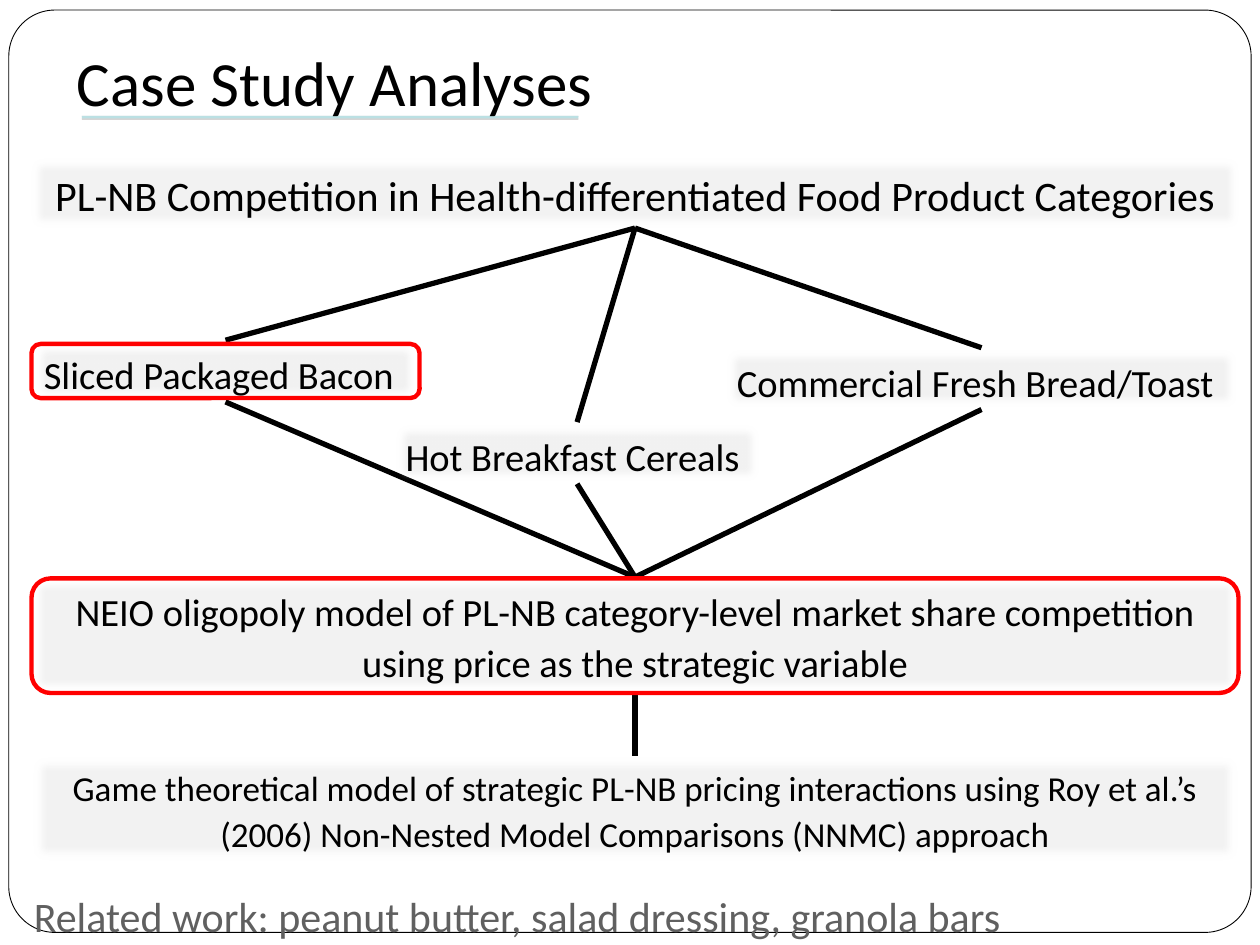
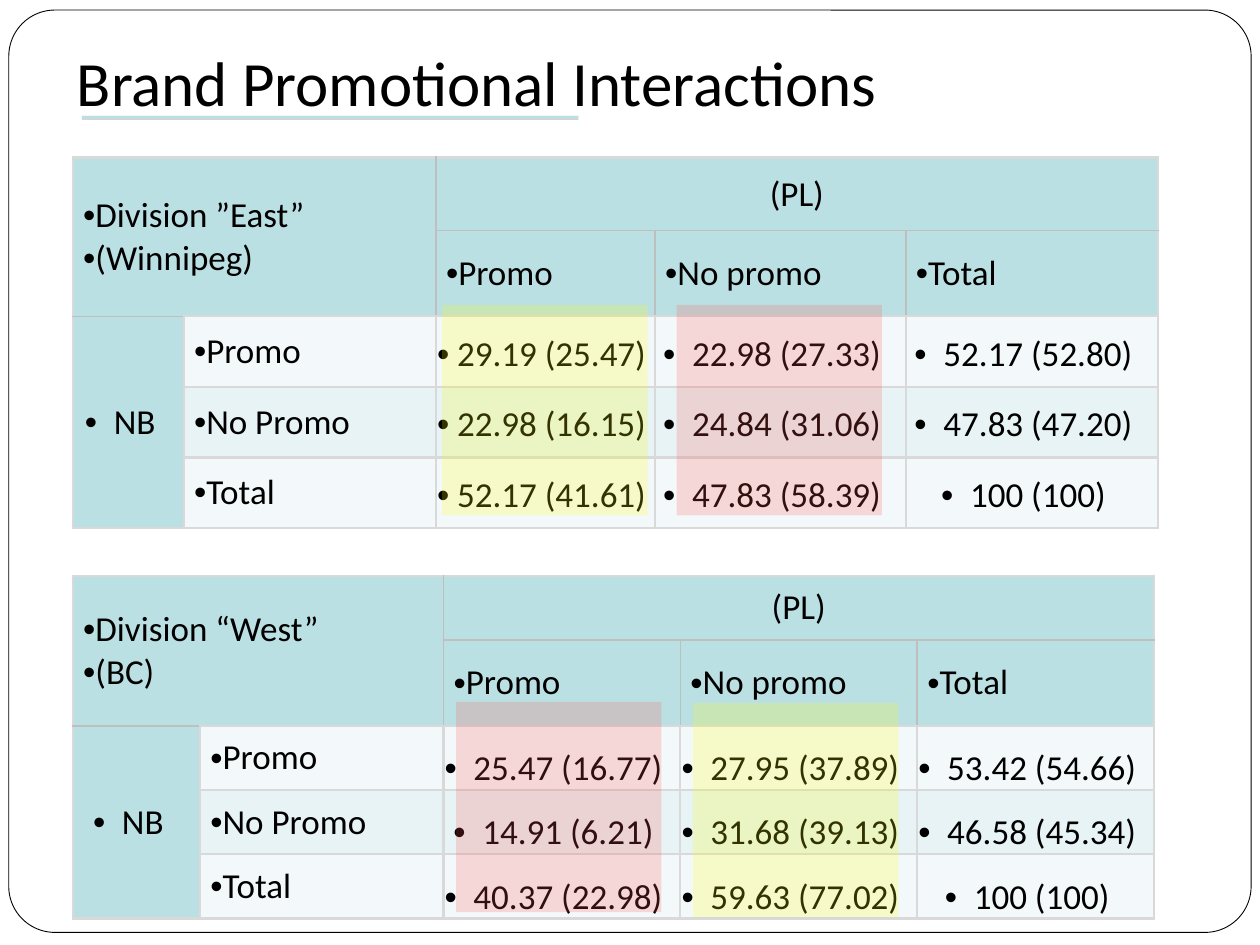
from dataclasses import dataclass

from lxml import etree
from pptx import Presentation
from pptx.dml.color import RGBColor
from pptx.enum.shapes import MSO_CONNECTOR, MSO_SHAPE
from pptx.enum.text import MSO_ANCHOR, MSO_AUTO_SIZE, PP_ALIGN
from pptx.oxml.ns import qn
from pptx.util import Inches, Pt

BLACK = RGBColor(0x00, 0x00, 0x00)
GREY_TEXT = RGBColor(0x60, 0x60, 0x60)
BOX_GREY = RGBColor(0xF2, 0xF2, 0xF2)
RULE_GREY = RGBColor(0xD9, 0xD9, 0xD9)
INNER_GREY = RGBColor(0xBF, 0xBF, 0xBF)
TEAL = RGBColor(0xBB, 0xE0, 0xE3)
PALE = RGBColor(0xF3, 0xF9, 0xFA)
PALE_BAND = RGBColor(0xE7, 0xF3, 0xF4)
RED = RGBColor(0xFF, 0x00, 0x00)
YELLOW = RGBColor(0xFF, 0xFF, 0x00)
CORAL = RGBColor(0xFF, 0x50, 0x50)

FONT = "Calibri"
RECT, ROUNDED = MSO_SHAPE.RECTANGLE, MSO_SHAPE.ROUNDED_RECTANGLE
STRAIGHT = MSO_CONNECTOR.STRAIGHT
LEFT, CENTER = PP_ALIGN.LEFT, PP_ALIGN.CENTER
TOP, MIDDLE, BOTTOM = MSO_ANCHOR.TOP, MSO_ANCHOR.MIDDLE, MSO_ANCHOR.BOTTOM
FIT_SHAPE, NO_FIT = MSO_AUTO_SIZE.SHAPE_TO_FIT_TEXT, MSO_AUTO_SIZE.NONE
SIDE_TOP, SIDE_BOTTOM = 0, 2
TITLE_ONLY = 5
HEADER_ROWS, TABLE_ROWS, TABLE_COLS = 2, 5, 5


@dataclass
class Box:
    text: str
    at: tuple[float, float, float, float]
    size: int
    align: PP_ALIGN = LEFT
    before: float = 0.2
    after: float = 0


@dataclass
class Division:
    names: list[str]
    at: tuple[float, float]
    widths: list[float]
    heights: list[float]
    values: list[list[str]]
    anchor: MSO_ANCHOR


@dataclass
class Highlight:
    at: tuple[float, float, float, float]
    color: RGBColor


HEADING = Box("PL-NB Competition in Health-differentiated Food Product Categories",
              (0.25, 1.26, 9.58, 0.55), 24, CENTER, 0)
CATEGORIES = [
    Box("Sliced Packaged Bacon", (0.25, 2.7, 3.08, 0.49), 22),
    Box("Hot Breakfast Cereals", (3.12, 3.35, 2.92, 0.49), 22, before=0),
    Box("Commercial Fresh Bread/Toast", (5.75, 2.76, 4.08, 0.49), 22),
]
MARKET_MODEL = Box(
    "NEIO oligopoly model of PL-NB category-level market share competition "
    "using price as the strategic variable",
    (0.25, 4.58, 9.58, 0.92), 22, CENTER, after=0.2)
GAME_MODEL = Box(
    "Game theoretical model of strategic PL-NB pricing interactions using "
    "Roy et al.’s (2006) Non-Nested Model Comparisons (NNMC) approach",
    (0.25, 6, 9.58, 0.84), 20, CENTER, after=0.2)
RED_OUTLINES = [(0.25, 4.59, 9.58, 0.91), (0.25, 2.73, 3.08, 0.43)]

DIVISIONS = [
    Division(["Division ”East”", "(Winnipeg)"], (0.58, 1.25),
             [0.88, 2, 1.74, 1.99, 2], [0.58, 0.58, 0.56, 0.56, 0.56],
             [["29.19 (25.47)", "22.98 (27.33)", "52.17 (52.80)"],
              ["22.98 (16.15)", "24.84 (31.06)", "47.83 (47.20)"],
              ["52.17 (41.61)", "47.83 (58.39)", "100 (100)"]], MIDDLE),
    Division(["Division “West”", "(BC)"], (0.58, 4.57),
             [1.01, 1.93, 1.88, 1.88, 1.88], [0.51] * TABLE_ROWS,
             [["25.47 (16.77)", "27.95 (37.89)", "53.42 (54.66)"],
              ["14.91 (6.21)", "31.68 (39.13)", "46.58 (45.34)"],
              ["40.37 (22.98)", "59.63 (77.02)", "100 (100)"]], BOTTOM),
]
HIGHLIGHTS = [
    Highlight((3.51, 2.42, 1.63, 1.67), YELLOW),
    Highlight((5.5, 5.58, 1.63, 1.7), YELLOW),
    Highlight((5.37, 2.42, 1.63, 1.67), CORAL),
    Highlight((3.62, 5.57, 1.63, 1.67), CORAL),
]


def inches(values) -> list:
    return [Inches(v) for v in values]


def write(p, text: str, size: int, color: RGBColor = BLACK, align=LEFT,
          spacing: float = 1.1, before: float = 0, after: float = 0) -> None:
    """Fill a paragraph; before and after are shares of the text size."""
    p.alignment, p.line_spacing = align, spacing
    p.space_before, p.space_after = Pt(before * size), Pt(after * size)
    r = p.add_run()
    r.text = text
    r.font.name, r.font.size, r.font.color.rgb = FONT, Pt(size), color


def add_bullet(p, hanging: float) -> None:
    pPr = p._p.get_or_add_pPr()
    pPr.set("marL", "0")
    pPr.set("indent", str(-Inches(hanging)))
    etree.SubElement(pPr, qn("a:buFont"), typeface="Arial")
    etree.SubElement(pPr, qn("a:buChar"), char="•")


def add_panel(slide, kind, at, fill=None, line=None, width: float = 0):
    sp = slide.shapes.add_shape(kind, *inches(at))
    sp.shadow.inherit = False
    if fill is None:
        sp.fill.background()
    else:
        sp.fill.solid()
        sp.fill.fore_color.rgb = fill
    if line is None:
        sp.line.fill.background()
    else:
        sp.line.color.rgb, sp.line.width = line, Pt(width)
    return sp


def add_titled_slide(prs, title: str):
    """Add a slide with the rounded frame, the accent bar and the title."""
    slide = prs.slides.add_slide(prs.slide_layouts[TITLE_ONLY])
    frame = add_panel(slide, ROUNDED, (0.07, 0.08, 9.86, 7.32), None, BLACK, 0.5)
    frame.adjustments[0] = 0.05
    for top, height, color in ((0.92, 0.01, RULE_GREY), (0.94, 0.01, INNER_GREY),
                               (0.92, 0.02, TEAL)):
        add_panel(slide, RECT, (0.65, top, 3.94, height), color)
    sp = slide.shapes.title
    sp.left, sp.top, sp.width, sp.height = inches((0.51, -0.01, 8.21, 1.25))
    tf = sp.text_frame
    tf.auto_size, tf.vertical_anchor = NO_FIT, MIDDLE
    write(tf.paragraphs[0], title, 36)
    slide.shapes._spTree.append(sp._element)
    return slide


def add_soft_box(slide, box: Box):
    """Add a grey text box whose edges fade out."""
    sp = add_panel(slide, RECT, box.at, BOX_GREY)
    effects = sp._element.spPr.find(qn("a:effectLst"))
    etree.SubElement(effects, qn("a:softEdge"), rad=str(Pt(5)))
    tf = sp.text_frame
    tf.word_wrap, tf.auto_size, tf.vertical_anchor = True, FIT_SHAPE, TOP
    write(tf.paragraphs[0], box.text, box.size, align=box.align,
          before=box.before, after=box.after)
    return sp


def join(slide, upper, lower) -> None:
    line = slide.shapes.add_connector(STRAIGHT, 0, 0, 0, 0)
    line.begin_connect(upper, SIDE_BOTTOM)
    line.end_connect(lower, SIDE_TOP)
    line.line.color.rgb, line.line.width = BLACK, Pt(3)
    etree.SubElement(line._element.spPr, qn("a:effectLst"))


def add_case_study_slide(prs) -> None:
    slide = add_titled_slide(prs, "Case Study Analyses")
    heading = add_soft_box(slide, HEADING)
    market = add_soft_box(slide, MARKET_MODEL)
    for category in CATEGORIES:
        sp = add_soft_box(slide, category)
        join(slide, heading, sp)
        join(slide, sp, market)
    join(slide, market, add_soft_box(slide, GAME_MODEL))
    for at in RED_OUTLINES:
        add_panel(slide, ROUNDED, at, None, RED, 2.5)

    tf = slide.shapes.add_textbox(*inches((0.17, 6.98, 8.03, 0.52))).text_frame
    tf.word_wrap, tf.auto_size = False, FIT_SHAPE
    write(tf.paragraphs[0],
          "Related work: peanut butter, salad dressing, granola bars",
          24, GREY_TEXT, before=0.2, after=0.2)


def style_cell(cell, row: int, col: int) -> None:
    """Set borders and fill; lines between header cells are thin and darker."""
    header = row < HEADER_ROWS
    inner = {
        "lnL": header and col > 0,
        "lnR": header and col < (2 if row == 0 else TABLE_COLS - 1),
        "lnT": row == 1 or (row == 2 and col == 0),
        "lnB": row == 0 or (row == 1 and col < 2),
    }
    tcPr = cell._tc.get_or_add_tcPr()
    for tag, is_inner in inner.items():
        ln = etree.SubElement(tcPr, qn(f"a:{tag}"), w=str(Pt(1 if is_inner else 1.5)))
        fill = etree.SubElement(ln, qn("a:solidFill"))
        etree.SubElement(fill, qn("a:srgbClr"),
                         val=str(INNER_GREY if is_inner else RULE_GREY))
    cell.fill.solid()
    banded = PALE_BAND if row == 3 else PALE
    cell.fill.fore_color.rgb = TEAL if header or col == 0 else banded


def fill_cell(cell, lines: list[str], align=LEFT, bullet: bool = True,
              value_anchor=None) -> None:
    """Write the lines; a value cell has tight margins and looser spacing."""
    is_value = value_anchor is not None
    side, top = (0.01, 0.01) if is_value else (0.08, 0)
    cell.margin_left = cell.margin_right = Inches(side)
    cell.margin_top, cell.margin_bottom = Inches(top), 0
    cell.vertical_anchor = value_anchor if is_value else MIDDLE
    spacing, before, after = (1.1, 0.12, 0.2) if is_value else (1.0, 0, 0)
    tf = cell.text_frame
    for i, text in enumerate(lines):
        p = tf.add_paragraph() if i else tf.paragraphs[0]
        write(p, text, 20, align=align, spacing=spacing, before=before, after=after)
        if bullet:
            add_bullet(p, 0.23 if align == CENTER else 0)


def add_division_table(slide, division: Division) -> None:
    size = sum(division.widths), sum(division.heights)
    table = slide.shapes.add_table(TABLE_ROWS, TABLE_COLS,
                                   *inches(division.at + size)).table
    table.first_row = table.horz_banding = False
    for column, width in zip(table.columns, division.widths):
        column.width = Inches(width)
    for row, height in zip(table.rows, division.heights):
        row.height = Inches(height)
    for r in range(TABLE_ROWS):
        for c in range(TABLE_COLS):
            style_cell(table.cell(r, c), r, c)
    for first, last in (((0, 0), (1, 1)), ((0, 2), (0, 4)), ((2, 0), (4, 0))):
        table.cell(*first).merge(table.cell(*last))

    fill_cell(table.cell(0, 0), division.names)
    fill_cell(table.cell(0, 2), ["(PL)"], CENTER, bullet=False)
    fill_cell(table.cell(2, 0), ["NB"], CENTER)
    for c, label in enumerate(("Promo", "No promo", "Total"), 2):
        fill_cell(table.cell(1, c), [label])
    for r, label in enumerate(("Promo", "No Promo", "Total"), HEADER_ROWS):
        fill_cell(table.cell(r, 1), [label])
        for c, value in enumerate(division.values[r - HEADER_ROWS], 2):
            fill_cell(table.cell(r, c), [value], CENTER,
                      value_anchor=division.anchor)


def add_promotion_slide(prs) -> None:
    slide = add_titled_slide(prs, "Brand Promotional Interactions")
    for division in DIVISIONS:
        add_division_table(slide, division)
    for highlight in HIGHLIGHTS:
        sp = add_panel(slide, RECT, highlight.at, highlight.color)
        color = sp._element.spPr.find(f"{qn('a:solidFill')}/{qn('a:srgbClr')}")
        etree.SubElement(color, qn("a:alpha"), val="20000")


def main() -> None:
    prs = Presentation()
    prs.slide_width, prs.slide_height = Inches(10), Inches(7.5)
    add_case_study_slide(prs)
    add_promotion_slide(prs)
    prs.save("out.pptx")


if __name__ == "__main__":
    main()
